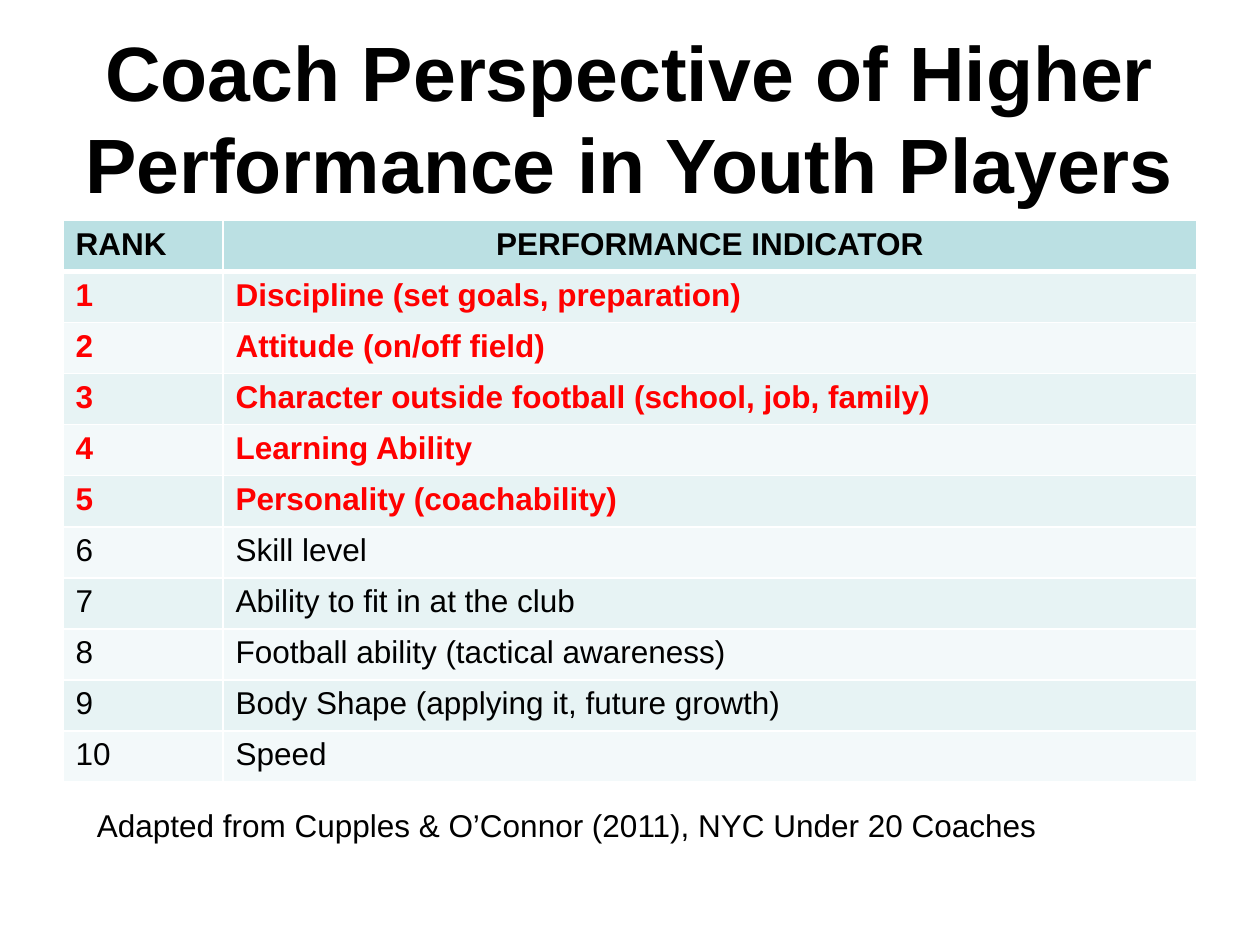
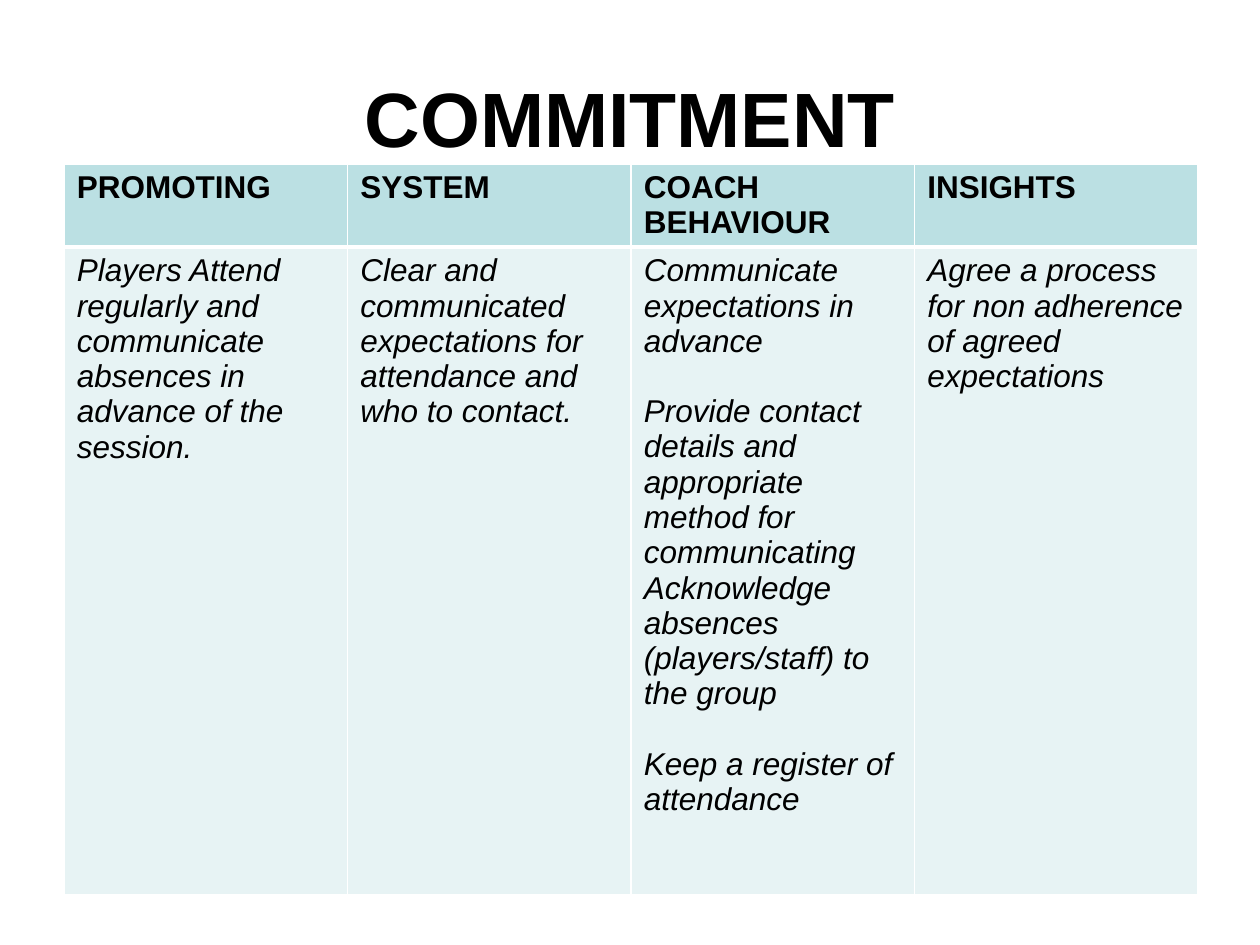
"""Builds two slides on coaching youth players."""
from lxml import etree
from pptx import Presentation
from pptx import util as u
from pptx.dml.color import RGBColor
from pptx.enum import text
from pptx.oxml.ns import qn

COLOURS = {
    "text": "000000",
    "highlight": "FF0000",
    "header": "BBE0E3",
    "band_dark": "E7F3F4",
    "band_light": "F3F9FA",
    "border": "FFFFFF",
}
INDICATORS = [
    "Discipline (set goals, preparation)",
    "Attitude (on/off field)",
    "Character outside football (school, job, family)",
    "Learning Ability",
    "Personality (coachability)",
    "Skill level",
    "Ability to fit in at the club",
    "Football ability (tactical awareness)",
    "Body Shape (applying it, future growth)",
    "Speed",
]
TOP_RANKS = 5
COMMITMENT = {
    "PROMOTING": ["Players Attend regularly and communicate absences in advance of the session."],
    "SYSTEM": ["Clear and communicated expectations for attendance and who to contact."],
    "COACH BEHAVIOUR": [
        "Communicate expectations in advance",
        "Provide contact details and appropriate method for communicating",
        "Acknowledge absences (players/staff) to the group",
        "Keep a register of attendance",
    ],
    "INSIGHTS": ["Agree a process for non adherence of agreed expectations"],
}
SPACED_PARAGRAPHS = (1, 3)


class Deck:
    """Holds the shared style and the current slide."""

    font_name = "Arial"
    title_size = 44
    body_size = 18

    def __init__(self):
        self.presentation = Presentation()
        self.presentation.slide_width = u.Inches(10)
        self.presentation.slide_height = u.Inches(7.5)
        self.slide = None

    def format(self, paragraph, size=body_size, colour="text", bold=False, italic=False):
        font = paragraph.font
        font.name, font.size = self.font_name, u.Pt(size)
        font.bold, font.italic = bold, italic
        font.color.rgb = RGBColor.from_string(COLOURS[colour])

    def add_slide(self, title):
        self.slide = self.presentation.slides.add_slide(self.presentation.slide_layouts[5])
        shape = self.slide.shapes.title
        shape.left, shape.top = u.Inches(0.5), u.Inches(0.3)
        shape.width, shape.height = u.Inches(9), u.Inches(1.25)
        frame = shape.text_frame
        frame.text = title
        frame.auto_size = text.MSO_AUTO_SIZE.NONE
        frame.vertical_anchor = text.MSO_ANCHOR.MIDDLE
        paragraph = frame.paragraphs[0]
        paragraph.alignment = text.PP_ALIGN.CENTER
        self.format(paragraph, self.title_size, bold=True)

    def add_text(self, content, left, top, width, height):
        box = self.slide.shapes.add_textbox(*map(u.Inches, (left, top, width, height)))
        box.text_frame.word_wrap = True
        box.text_frame.text = content
        self.format(box.text_frame.paragraphs[0])

    def add_table(self, left, top, widths, heights):
        table = self.slide.shapes.add_table(
            len(heights), len(widths), u.Inches(left), u.Inches(top),
            u.Inches(sum(widths)), u.Inches(sum(heights))).table
        for column, width in zip(table.columns, widths):
            column.width = u.Inches(width)
        for row, height in zip(table.rows, heights):
            row.height = u.Inches(height)
        for row_index, row in enumerate(table.rows):
            for cell in row.cells:
                self.style_cell(cell, row_index)
        return table

    def style_cell(self, cell, row_index):
        band = "band_dark" if row_index % 2 else "band_light"
        cell.fill.solid()
        cell.fill.fore_color.rgb = RGBColor.from_string(COLOURS[band if row_index else "header"])
        widths = {"L": 1, "R": 1, "T": 3 if row_index == 1 else 1, "B": 1 if row_index else 3}
        properties = cell._tc.get_or_add_tcPr()
        for position, (side, width) in enumerate(widths.items()):
            line = etree.Element(qn(f"a:ln{side}"), w=str(u.Pt(width)))
            fill = etree.SubElement(line, qn("a:solidFill"))
            etree.SubElement(fill, qn("a:srgbClr"), val=COLOURS["border"])
            properties.insert(position, line)

    def fill_cell(self, cell, paragraphs, **style):
        cell.text = "\n".join(paragraphs)
        for paragraph in cell.text_frame.paragraphs:
            self.format(paragraph, **style)


def build_ranking(deck):
    deck.add_slide("Coach Perspective of Higher Performance in Youth Players")
    table = deck.add_table(0.5, 1.75, [1.27, 7.73], [4.46 / 11] * (len(INDICATORS) + 1))
    for column, heading in enumerate(("RANK", "PERFORMANCE INDICATOR")):
        deck.fill_cell(table.cell(0, column), [heading], bold=True)
    table.cell(0, 1).text_frame.paragraphs[0].alignment = text.PP_ALIGN.CENTER
    for rank, indicator in enumerate(INDICATORS, start=1):
        is_top = rank <= TOP_RANKS
        colour = "highlight" if is_top else "text"
        for column, content in enumerate((str(rank), indicator)):
            deck.fill_cell(table.cell(rank, column), [content], colour=colour, bold=is_top)
    deck.add_text("Adapted from Cupples & O’Connor (2011), NYC Under 20 Coaches",
                  0.67, 6.35, 7.8, 0.4)


def build_commitment(deck):
    deck.add_slide("COMMITMENT")
    table = deck.add_table(0.51, 1.3, [2.25] * len(COMMITMENT), [0.65, 5.14])
    for column, (heading, points) in enumerate(COMMITMENT.items()):
        deck.fill_cell(table.cell(0, column), [heading], bold=True)
        body = table.cell(1, column)
        deck.fill_cell(body, points, italic=True)
        for index, paragraph in enumerate(body.text_frame.paragraphs):
            if index in SPACED_PARAGRAPHS:
                paragraph.space_before = u.Pt(20)


def main():
    deck = Deck()
    build_ranking(deck)
    build_commitment(deck)
    deck.presentation.save("out.pptx")


if __name__ == "__main__":
    main()
